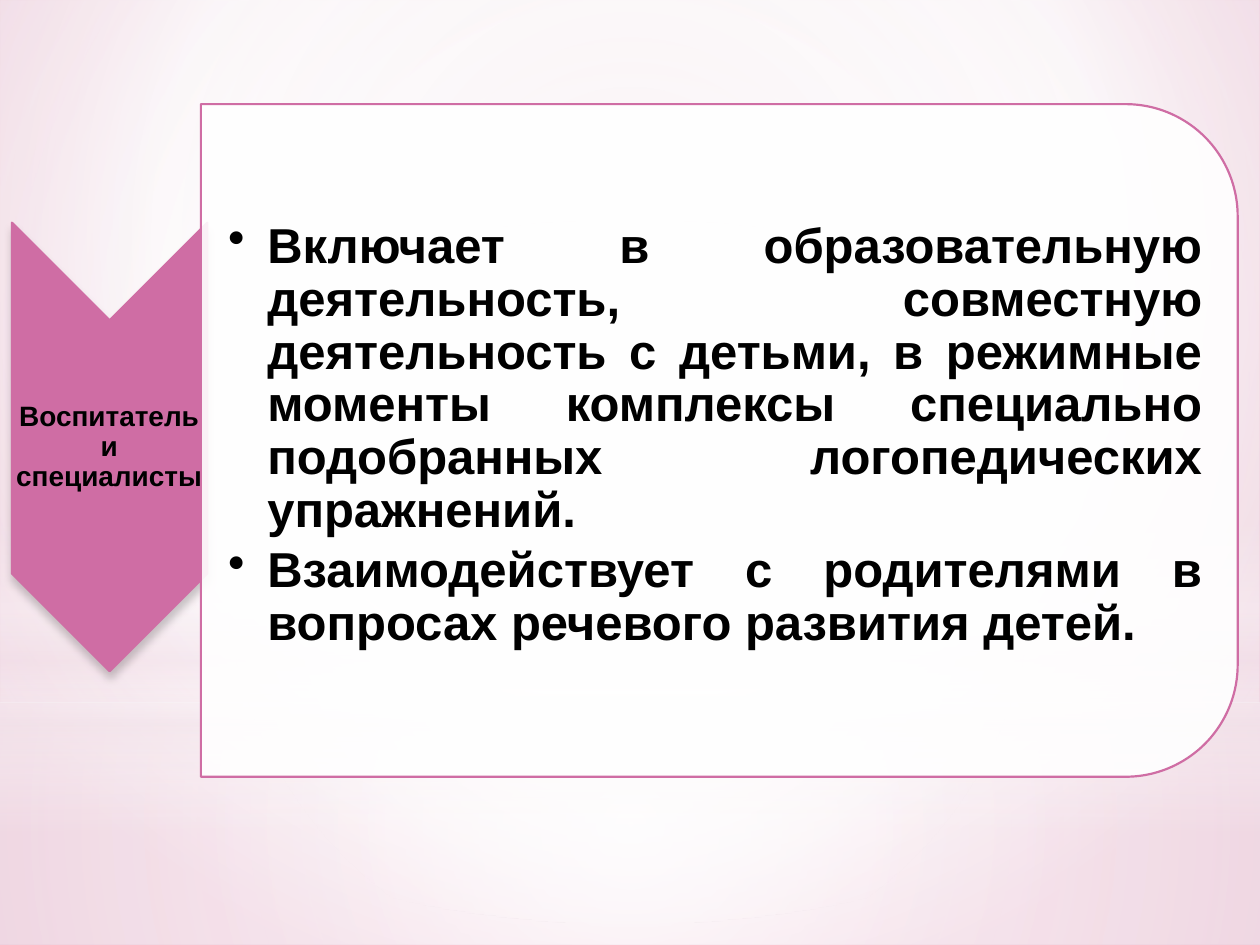
from lxml import etree
from pptx import Presentation, util as u
from pptx.dml.color import RGBColor
from pptx.enum import shapes, text
from pptx.oxml import ns

PINK = "CF6DA4"


def rgb(value):
    return RGBColor.from_string(value)


def set_gradient(owner, stops, focus=None):
    """Rewrite the gradient under owner; stops are (position %, colour, opacity %).

    focus gives the left, top, right and bottom % of a radial centre;
    without it the gradient runs downwards.
    """
    gradient = next(owner.iter(ns.qn("a:gradFill")))
    for child in list(gradient):
        gradient.remove(child)
    stop_list = etree.SubElement(gradient, ns.qn("a:gsLst"))
    for position, colour, opacity in stops:
        stop = etree.SubElement(stop_list, ns.qn("a:gs"), pos=str(position * 1000))
        tint = etree.SubElement(stop, ns.qn("a:srgbClr"), val=colour)
        etree.SubElement(tint, ns.qn("a:alpha"), val=str(opacity * 1000))
    if focus:
        radial = etree.SubElement(gradient, ns.qn("a:path"), path="circle")
        sides = {side: str(share * 1000) for side, share in zip("ltrb", focus)}
        etree.SubElement(radial, ns.qn("a:fillToRect"), **sides)
    else:
        etree.SubElement(gradient, ns.qn("a:lin"), ang="5400000", scaled="0")


deck = Presentation()
deck.slide_width, deck.slide_height = u.Cm(25.4), u.Cm(19.05)
slide = deck.slides.add_slide(deck.slide_layouts[6])

# Backdrop
slide.background.fill.gradient()
set_gradient(slide.element, [(0, "EDDAE2", 100), (60, "FFFFFF", 100), (100, "E09DBC", 100)],
             (20, 10, 20, 60))

centre = (50, 50, 50, 50)
kind = shapes.MSO_SHAPE
glows = [
    (kind.RECTANGLE, 14.17, 4.88,
     [(0, "FFFFFF", 91), (37, "FFFFFF", 76), (100, "F4E7ED", 79)], centre),
    (kind.RECTANGLE, 0, 14.17,
     [(0, "FFFFFF", 89), (48, "FFFFFF", 62), (100, "F4E7ED", 79)], centre),
    (kind.RECTANGLE, 10.46, 6.35,
     [(0, "FFFFFF", 0), (29, "FFFFFF", 30), (45, "F4E7ED", 40),
      (55, "FFFFFF", 26), (65, "F4E7ED", 60), (100, "FFFFFF", 0)], None),
    (kind.OVAL, 4.45, 14.17, [(0, "FFFFFF", 100), (56, "FFFFFF", 0)], centre),
]
for outline, top, height, stops, focus in glows:
    glow = slide.shapes.add_shape(outline, 0, u.Cm(top), deck.slide_width, u.Cm(height))
    glow.shadow.inherit = False
    glow.line.fill.background()
    glow.fill.gradient()
    set_gradient(glow.element.spPr, stops, focus)

# Chevron and panel, each turned a quarter with its text upright on top
parts = [
    (kind.CHEVRON, (-2.31, 7.04, 9.04, 3.94), PINK,
     (0.23, 6.45, 3.94, 5.13), (0.03, 0.03), 16, text.PP_ALIGN.CENTER,
     ["Воспитатель и специалисты"]),
    (kind.ROUND_2_SAME_RECTANGLE, (7.72, -1.57, 13.56, 20.9), "FFFFFF",
     (4.04, 2.67, 20.24, 12.24), (0.56, 0.05), 28, text.PP_ALIGN.JUSTIFY,
     ["Включает в образовательную деятельность, совместную деятельность с детьми, "
      "в режимные моменты комплексы специально подобранных логопедических упражнений.",
      "Взаимодействует с родителями в вопросах речевого развития детей."]),
]
for outline, place, colour, text_place, insets, size, align, lines in parts:
    body = slide.shapes.add_shape(outline, *map(u.Cm, place))
    body.rotation = 90
    body.shadow.inherit = False
    body.fill.solid()
    body.fill.fore_color.rgb = rgb(colour)
    body.line.color.rgb = rgb(PINK)
    body.line.width = u.Pt(1.25)
    if outline == kind.CHEVRON:
        effects = body.element.spPr.find(ns.qn("a:effectLst"))
        shadow = etree.SubElement(effects, ns.qn("a:outerShdw"), blurRad=str(u.Pt(5)),
                                  dist=str(u.Pt(4)), dir="5400000", rotWithShape="0")
        shade, opacity = etree.SubElement(shadow, ns.qn("a:srgbClr"), val="000000"), "20000"
    else:
        shade = next(body.element.spPr.iter(ns.qn("a:srgbClr")))
        opacity = "90000"
    etree.SubElement(shade, ns.qn("a:alpha"), val=opacity)

    frame = slide.shapes.add_textbox(*map(u.Cm, text_place)).text_frame
    frame.word_wrap = True
    frame.vertical_anchor = text.MSO_ANCHOR.MIDDLE
    frame.margin_left = u.Cm(insets[0])
    frame.margin_right = frame.margin_top = frame.margin_bottom = u.Cm(insets[1])
    for index, line in enumerate(lines):
        paragraph = frame.add_paragraph() if index else frame.paragraphs[0]
        paragraph.alignment = align
        paragraph.line_spacing = 0.9
        if align == text.PP_ALIGN.JUSTIFY:
            paragraph.space_after = u.Pt(4)
            properties = paragraph._p.get_or_add_pPr()
            properties.set("marL", str(u.Cm(0.79)))
            properties.set("indent", str(u.Cm(-0.79)))
            etree.SubElement(properties, ns.qn("a:buChar"), char="•")
        run = paragraph.add_run()
        run.text = line
        run.font.name = "Arial"
        run.font.size = u.Pt(size)
        run.font.bold = True
        run.font.color.rgb = rgb("000000")

deck.save("out.pptx")
